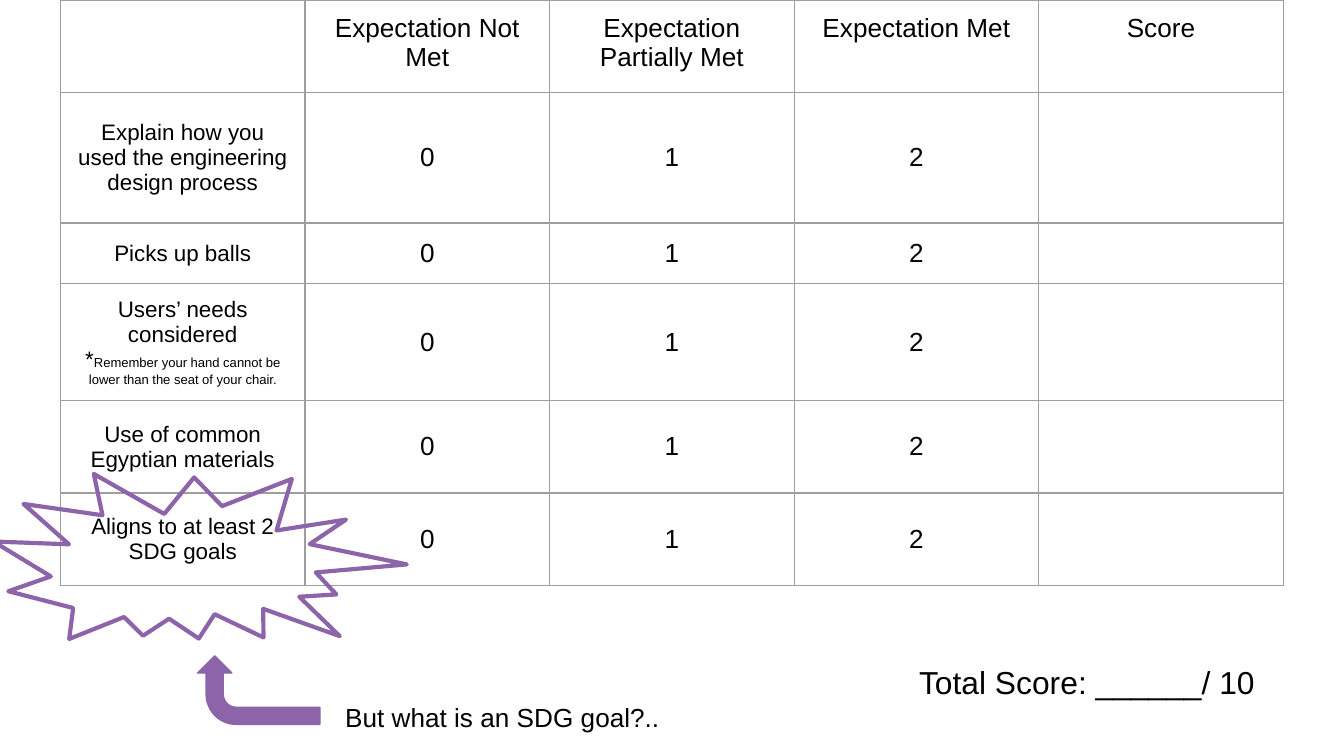
import pptx
import pptx.util
import pptx.dml.color
import pptx.enum.shapes
import pptx.enum.text
from lxml import etree

Inches, Pt = pptx.util.Inches, pptx.util.Pt
SHAPE = pptx.enum.shapes.MSO_SHAPE
ANCHOR = pptx.enum.text.MSO_ANCHOR
CENTER = pptx.enum.text.PP_ALIGN.CENTER
NS = "http://schemas.openxmlformats.org/drawingml/2006/main"

SLIDE_WIDTH = 10
SLIDE_HEIGHT = SLIDE_WIDTH * 9 / 16
BLACK, PURPLE, GRID = "000000", "8D64AA", "9E9E9E"
HEADERS = ["", "Expectation Not Met", "Expectation Partially Met", "Expectation Met", "Score"]
CRITERIA = [
    "Explain how you used the engineering design process",
    "Picks up balls",
    "Users’ needs considered",
    "Use of common Egyptian materials",
    "Aligns to at least 2 SDG goals",
]
HAND_RULE = "Remember your hand cannot be lower than the seat of your chair."
ROW_HEIGHTS = [0.69, 0.97, 0.45, 0.87, 0.69, 0.69]


def rgb(color):
    return pptx.dml.color.RGBColor.from_string(color)


def style_run(r, size):
    r.font.size = Pt(size)
    r.font.name = "Arial"
    r.font.color.rgb = rgb(BLACK)


def set_margins(box):
    box.margin_left = box.margin_right = Inches(0.1)
    box.margin_top = box.margin_bottom = Inches(0.1)


def add_borders(cell):
    tcPr = cell._tc.get_or_add_tcPr()
    for position, side in enumerate(("lnL", "lnR", "lnT", "lnB")):
        ln = etree.Element(f"{{{NS}}}{side}", w=str(Pt(0.75)))
        fill = etree.SubElement(ln, f"{{{NS}}}solidFill")
        etree.SubElement(fill, f"{{{NS}}}srgbClr", val=GRID)
        tcPr.insert(position, ln)


def fill_cell(cell, text, size, anchor):
    cell.fill.background()
    add_borders(cell)
    if not text:
        return
    set_margins(cell)
    cell.vertical_anchor = anchor
    cell.text_frame.text = text
    p = cell.text_frame.paragraphs[0]
    p.alignment = CENTER
    style_run(p.runs[0], size)


def add_rubric(s, x, y, w):
    rows = [HEADERS] + [[name, "0", "1", "2", ""] for name in CRITERIA]
    frame = s.shapes.add_table(len(rows), len(HEADERS), Inches(x), Inches(y),
                               Inches(w), Inches(sum(ROW_HEIGHTS)))
    table = frame.table
    table.first_row = table.horz_banding = False
    for column in table.columns:
        column.width = Inches(w / len(HEADERS))
    for i, (values, height) in enumerate(zip(rows, ROW_HEIGHTS)):
        table.rows[i].height = Inches(height)
        for j, text in enumerate(values):
            size = 12 if j == 0 else 14
            fill_cell(table.cell(i, j), text, size, ANCHOR.MIDDLE if i else ANCHOR.TOP)

    # Small print under the users' needs criterion
    p = table.cell(3, 0).text_frame.add_paragraph()
    p.alignment = CENTER
    for text, size in (("*", 12), (HAND_RULE, 7)):
        r = p.add_run()
        r.text = text
        style_run(r, size)


def add_purple_shape(s, kind, x, y, w, h, rotation, line_width):
    sp = s.shapes.add_shape(kind, Inches(x), Inches(y), Inches(w), Inches(h))
    sp.shadow.inherit = False
    sp.rotation = rotation
    sp.fill.background()
    sp.line.color.rgb = rgb(PURPLE)
    sp.line.width = Pt(line_width)
    return sp


def add_label(s, text, size, x, y, w, h):
    tf = s.shapes.add_textbox(Inches(x), Inches(y), Inches(w), Inches(h)).text_frame
    tf.word_wrap = True
    set_margins(tf)
    tf.text = text
    style_run(tf.paragraphs[0].runs[0], size)


def add_sdg_callout(s, x, y):
    # Starburst around the last criterion
    add_purple_shape(s, SHAPE.EXPLOSION2, x, y, 3.05, 1.49, 11.2, 2.25)

    # Bent arrow leading from the question up to the starburst
    arrow = add_purple_shape(s, SHAPE.BENT_ARROW, x + 1.72, y + 1.24, 0.51, 0.91, 270, 0.75)
    arrow.adjustments[3] = 0.44
    arrow.fill.solid()
    arrow.fill.fore_color.rgb = rgb(PURPLE)

    add_label(s, "But what is an SDG goal?..", 14, x + 2.52, y + 1.68, 2.86, 0.39)


def main():
    prs = pptx.Presentation()
    prs.slide_width, prs.slide_height = Inches(SLIDE_WIDTH), Inches(SLIDE_HEIGHT)
    s = prs.slides.add_slide(prs.slide_layouts[6])
    add_rubric(s, 0.45, 0, 9.1)
    add_sdg_callout(s, -0.05, 3.44)
    add_label(s, "Total Score: ______/ 10", 17, 6.74, 4.83, 2.98, 0.74)
    prs.save("out.pptx")


if __name__ == "__main__":
    main()
